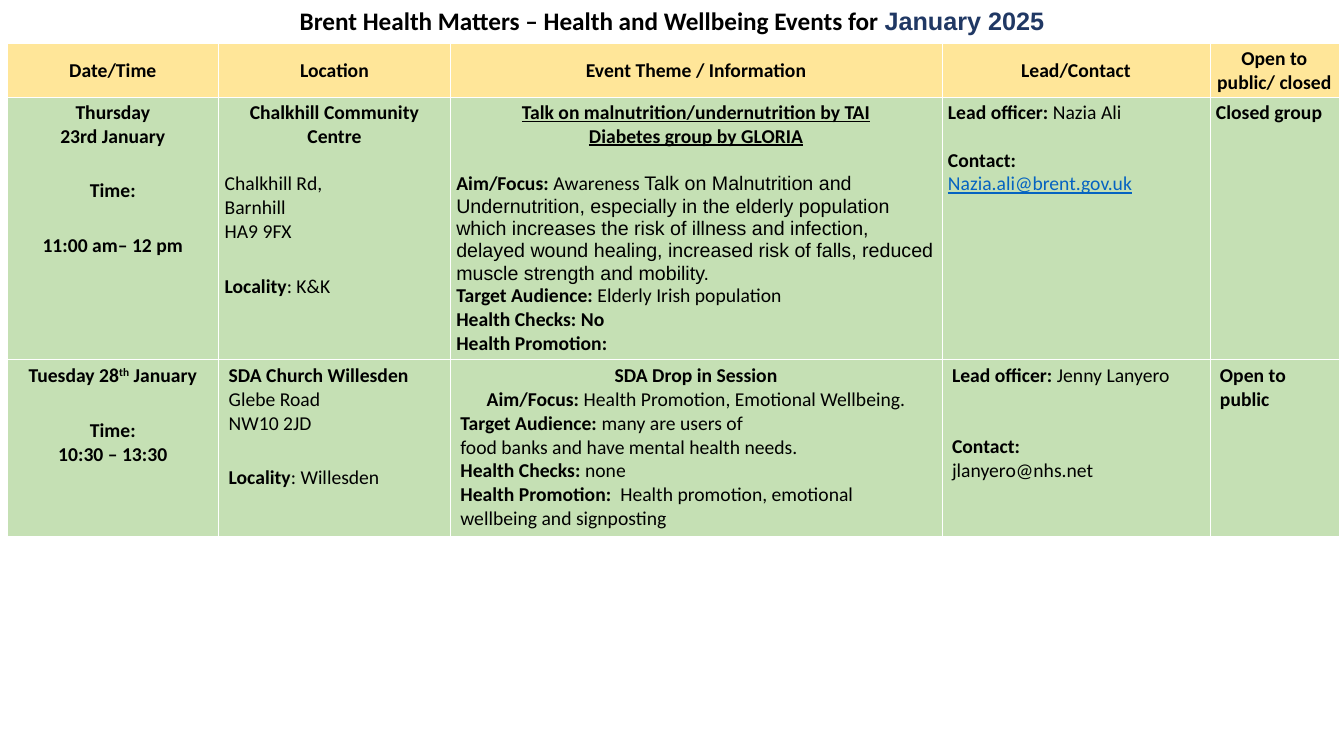
from lxml import etree
from pptx import Presentation
from pptx import util as u
from pptx.dml.color import RGBColor
from pptx.enum import text
from pptx.oxml import ns

BLACK = RGBColor(0x00, 0x00, 0x00)
WHITE = RGBColor(0xFF, 0xFF, 0xFF)
NAVY = RGBColor(0x20, 0x38, 0x64)
LINK_BLUE = RGBColor(0x05, 0x63, 0xC1)
HEADER_GOLD = RGBColor(0xFF, 0xE6, 0x99)
ROW_GREEN = RGBColor(0xC5, 0xE0, 0xB4)

SLIDE_W, SLIDE_H = 13.33, 7.5
TITLE_BOX = (0, 0, SLIDE_W, 0.61)
TABLE_BOX = (0.07, 0.43, 13.21, 4.88)
COL_SHARES = [2.1, 2.3, 4.88, 2.66, 1.28]
ROW_SHARES = [0.54, 2.59, 1.75]
TIGHT, ROOMY = (0.06, 0.03), (0.1, 0.05)  # cell margins: sides, top and bottom
LEFT, CENTER = text.PP_ALIGN.LEFT, text.PP_ALIGN.CENTER
SMALL_GAP, GAP, WIDE_GAP = 17, 22, 34  # points
NBSP = chr(160)  # written as ~ in the wording below


def line(*runs, al=LEFT, gap=0):
    """One paragraph; each run is (wording, style letters).

    b bold, u underlined, a Arial, l link colour, s superscript
    """
    return runs, al, gap


def bold(words, al=LEFT, gap=0):
    return line((words, "b"), al=al, gap=gap)


def plain(words, gap=0):
    return line((words, ""), gap=gap)


def labelled(label, words, al=LEFT, gap=0):
    return line((label, "b"), (words, ""), al=al, gap=gap)


HEADER = [[bold(words, CENTER)] for words in (
    "Date/Time", "Location", "Event Theme / Information",
    "Lead/Contact", "Open to public/ closed")]

CHALKHILL = [
    [bold("Thursday", CENTER),
     bold("23rd January", CENTER),
     bold("Time:", CENTER, GAP),
     bold("11:00 am– 12~pm", CENTER, GAP)],
    [bold("Chalkhill~Community", CENTER),
     bold("Centre", CENTER),
     plain("Chalkhill~Rd,", SMALL_GAP),
     plain("Barnhill"),
     plain("HA9 9FX"),
     labelled("Locality", ": K&K", gap=GAP)],
    [line(("Talk on malnutrition/undernutrition by TAI", "bu"), al=CENTER),
     line(("Diabetes group by GLORIA", "bu"), al=CENTER),
     line(("Aim/Focus: ", "b"), ("Awareness ", ""),
          ("Talk on Malnutrition and Undernutrition, especially in the elderly "
           "population which increases the risk of illness and infection, "
           "delayed wound healing, increased risk of falls, reduced muscle "
           "strength and mobility.", "a"), gap=SMALL_GAP),
     labelled("Target Audience: ", "Elderly Irish population"),
     bold("Health Checks: No"),
     bold("Health Promotion:")],
    [labelled("Lead officer: ", "Nazia Ali"),
     bold("Contact:", gap=SMALL_GAP),
     line(("Nazia.ali@brent.gov.uk", "lu"))],
    [bold("Closed group")],
]

WILLESDEN = [
    [line(("Tuesday 28", "b"), ("th", "bs"), (" January", "b"), al=CENTER),
     bold("Time:", CENTER, GAP),
     bold("10:30 – 13:30", CENTER)],
    [bold("SDA Church~Willesden"),
     plain("Glebe Road"),
     plain("NW10~2JD"),
     labelled("Locality", ": Willesden", gap=GAP)],
    [bold("SDA Drop in Session", CENTER),
     labelled("Aim/Focus:~", "Health Promotion, Emotional~Wellbeing.", CENTER),
     labelled("Target Audience:~",
              "many are users of food~banks~and~have~mental health needs."),
     labelled("Health Checks:~", "none"),
     labelled("Health Promotion:~ ",
              "Health promotion, emotional wellbeing and signposting")],
    [labelled("Lead officer: ", "Jenny Lanyero"),
     bold("Contact:", gap=WIDE_GAP),
     plain("jlanyero@nhs.net")],
    [bold("Open to public")],
]


def write_line(p, runs, al, gap):
    p.alignment = al
    p.space_before = u.Pt(gap)
    p.font.size = u.Pt(14)
    p.font.name = "Calibri"
    p.font.color.rgb = BLACK
    p.font.bold = all("b" in style for _, style in runs)
    for words, style in runs:
        r = p.add_run()
        r.text = words.replace("~", NBSP)
        if "b" in style and not p.font.bold:
            r.font.bold = True
        if "u" in style:
            r.font.underline = True
        if "a" in style:
            r.font.name = "Arial"
        if "l" in style:
            r.font.color.rgb = LINK_BLUE
        if "s" in style:
            r._r.get_or_add_rPr().set("baseline", "30000")


def add_borders(cell):
    tc_pr = cell._tc.get_or_add_tcPr()
    for side in ("lnL", "lnR", "lnT", "lnB"):
        ln = etree.SubElement(tc_pr, ns.qn(f"a:{side}"), w=str(u.Pt(0.5)))
        fill = etree.SubElement(ln, ns.qn("a:solidFill"))
        etree.SubElement(fill, ns.qn("a:srgbClr"), val=str(WHITE))


def fill_cell(cell, lines, colour, margins, anchor):
    add_borders(cell)
    cell.fill.solid()
    cell.fill.fore_color.rgb = colour
    cell.margin_left = cell.margin_right = u.Inches(margins[0])
    cell.margin_top = cell.margin_bottom = u.Inches(margins[1])
    cell.vertical_anchor = anchor
    tf = cell.text_frame
    for i, content in enumerate(lines):
        p = tf.add_paragraph() if i else tf.paragraphs[0]
        write_line(p, *content)


def add_title(s, box):
    sp = s.shapes.title
    sp.left, sp.top, sp.width, sp.height = map(u.Inches, box)
    tf = sp.text_frame
    tf.word_wrap = True
    tf.auto_size = text.MSO_AUTO_SIZE.NONE
    tf.vertical_anchor = text.MSO_ANCHOR.TOP
    p = tf.paragraphs[0]
    p.alignment = CENTER
    p.font.size = u.Pt(18)
    p.font.bold = True
    for words, font, colour in (
            ("Brent Health Matters – Health and Wellbeing Events for ", "Calibri", BLACK),
            ("January 2025", "Arial", NAVY)):
        r = p.add_run()
        r.text = words
        r.font.name = font
        r.font.color.rgb = colour


def add_events(s, box):
    width, height = box[2:]
    table = s.shapes.add_table(len(ROW_SHARES), len(COL_SHARES),
                               *map(u.Inches, box)).table
    table.first_row = table.horz_banding = False
    for col, share in zip(table.columns, COL_SHARES):
        col.width = u.Inches(width * share / sum(COL_SHARES))
    for row, share in zip(table.rows, ROW_SHARES):
        row.height = u.Inches(height * share / sum(ROW_SHARES))
    looks = (
        (HEADER, HEADER_GOLD, TIGHT, text.MSO_ANCHOR.MIDDLE),
        (CHALKHILL, ROW_GREEN, TIGHT, text.MSO_ANCHOR.TOP),
        (WILLESDEN, ROW_GREEN, ROOMY, text.MSO_ANCHOR.TOP),
    )
    for row, (cells, *look) in zip(table.rows, looks):
        for cell, lines in zip(row.cells, cells):
            fill_cell(cell, lines, *look)


def main():
    prs = Presentation()
    prs.slide_width, prs.slide_height = u.Inches(SLIDE_W), u.Inches(SLIDE_H)
    s = prs.slides.add_slide(prs.slide_layouts[5])  # title only
    add_events(s, TABLE_BOX)
    add_title(s, TITLE_BOX)
    prs.save("out.pptx")


if __name__ == "__main__":
    main()
